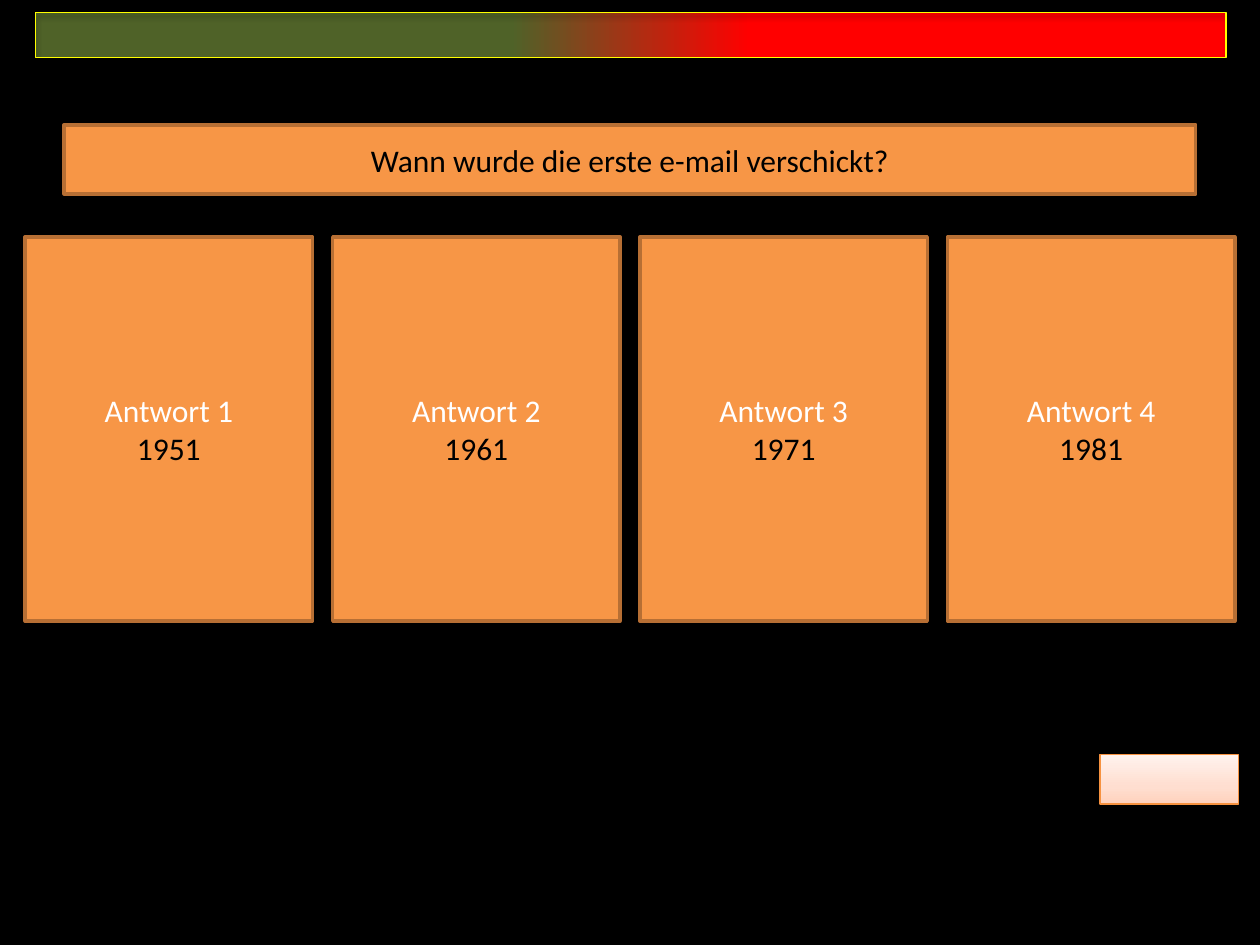
from copy import deepcopy

from lxml import etree
from pptx import Presentation, util as u
from pptx.dml.color import RGBColor
from pptx.enum import shapes, text
from pptx.oxml.ns import qn

BLACK, WHITE, ORANGE, BROWN = "000000", "FFFFFF", "F79646", "B76F34"
BAR_AREA = (0.28, 0.1, 9.45, 0.36)
YEARS = ("1951", "1961", "1971", "1981")
CARD_LEFT, CARD_PITCH = 0.2, 2.44


def color(value):
    return RGBColor.from_string(value)


def add_box(page, area, fill=None, line=None, width=0.75):
    """Plain rectangle; without a fill or line colour that part is empty."""
    box = page.shapes.add_shape(
        shapes.MSO_SHAPE.RECTANGLE, *(u.Inches(length) for length in area))
    box.shadow.inherit = False
    for part, value in ((box.fill, fill), (box.line.fill, line)):
        if value:
            part.solid()
            part.fore_color.rgb = color(value)
        else:
            part.background()
    if line:
        box.line.width = u.Pt(width)
    return box


def set_gradient(box, stops, angle):
    """Linear gradient through (position in percent, colour) stops."""
    box.fill.gradient()
    box.fill.gradient_angle = angle
    stop_list = box._element.spPr.find(qn("a:gradFill")).find(qn("a:gsLst"))
    for _ in stops[2:]:
        stop_list.append(deepcopy(stop_list[0]))
    for stop, (position, value) in zip(box.fill.gradient_stops, stops):
        stop.position = position / 100
        stop.color.rgb = color(value)


def add_shadow(box, opacity, blur, distance):
    """Black shadow that falls straight down."""
    effects = box._element.spPr.find(qn("a:effectLst"))
    shadow = etree.SubElement(
        effects, qn("a:outerShdw"), blurRad=str(u.Pt(blur)),
        dist=str(u.Pt(distance)), dir="5400000", rotWithShape="0")
    tint = etree.SubElement(shadow, qn("a:srgbClr"), val=BLACK)
    etree.SubElement(tint, qn("a:alpha"), val=str(opacity * 1000))


def add_text_box(page, area, lines):
    """Orange panel with one centred paragraph per (wording, colour)."""
    box = add_box(page, area, ORANGE, BROWN, 2)
    frame = box.text_frame
    frame.word_wrap = True
    frame.vertical_anchor = text.MSO_ANCHOR.MIDDLE
    for index, (wording, value) in enumerate(lines):
        para = frame.add_paragraph() if index else frame.paragraphs[0]
        para.alignment = text.PP_ALIGN.CENTER
        span = para.add_run()
        span.text = wording
        for name, setting in {"name": "Calibri", "size": u.Pt(18)}.items():
            setattr(span.font, name, setting)
        span.font.color.rgb = color(value)


def main():
    deck = Presentation()
    deck.slide_width, deck.slide_height = u.Inches(10), u.Inches(7.5)
    page = deck.slides.add_slide(deck.slide_layouts[6])
    page.background.fill.solid()
    page.background.fill.fore_color.rgb = color(BLACK)

    # Green to red bar with its yellow frame
    bar = add_box(page, BAR_AREA)
    set_gradient(bar, [(40, "4F6228"), (60, "FF0000")], 0)
    frame = add_box(page, BAR_AREA, line="FFFF00")
    for box in (bar, frame):
        add_shadow(box, 35, 3.1, 1.8)

    # Answer cards
    for index, year in enumerate(YEARS):
        area = (CARD_LEFT + index * CARD_PITCH, 1.88, 2.28, 3.05)
        add_text_box(page, area,
                     [(f"Antwort {index + 1}", WHITE), (year, BLACK)])

    # Question
    add_text_box(page, (0.51, 0.99, 8.98, 0.55),
                 [("Wann wurde die erste e-mail verschickt?", BLACK)])

    # Pale button
    button = add_box(page, (8.73, 5.99, 1.1, 0.39), line="F69240")
    set_gradient(button, [(0, "FFD2BD"), (35, "FFDED0"), (100, "FFF2ED")], 90)
    add_shadow(button, 38, 3.1, 1.6)

    deck.save("out.pptx")


if __name__ == "__main__":
    main()
